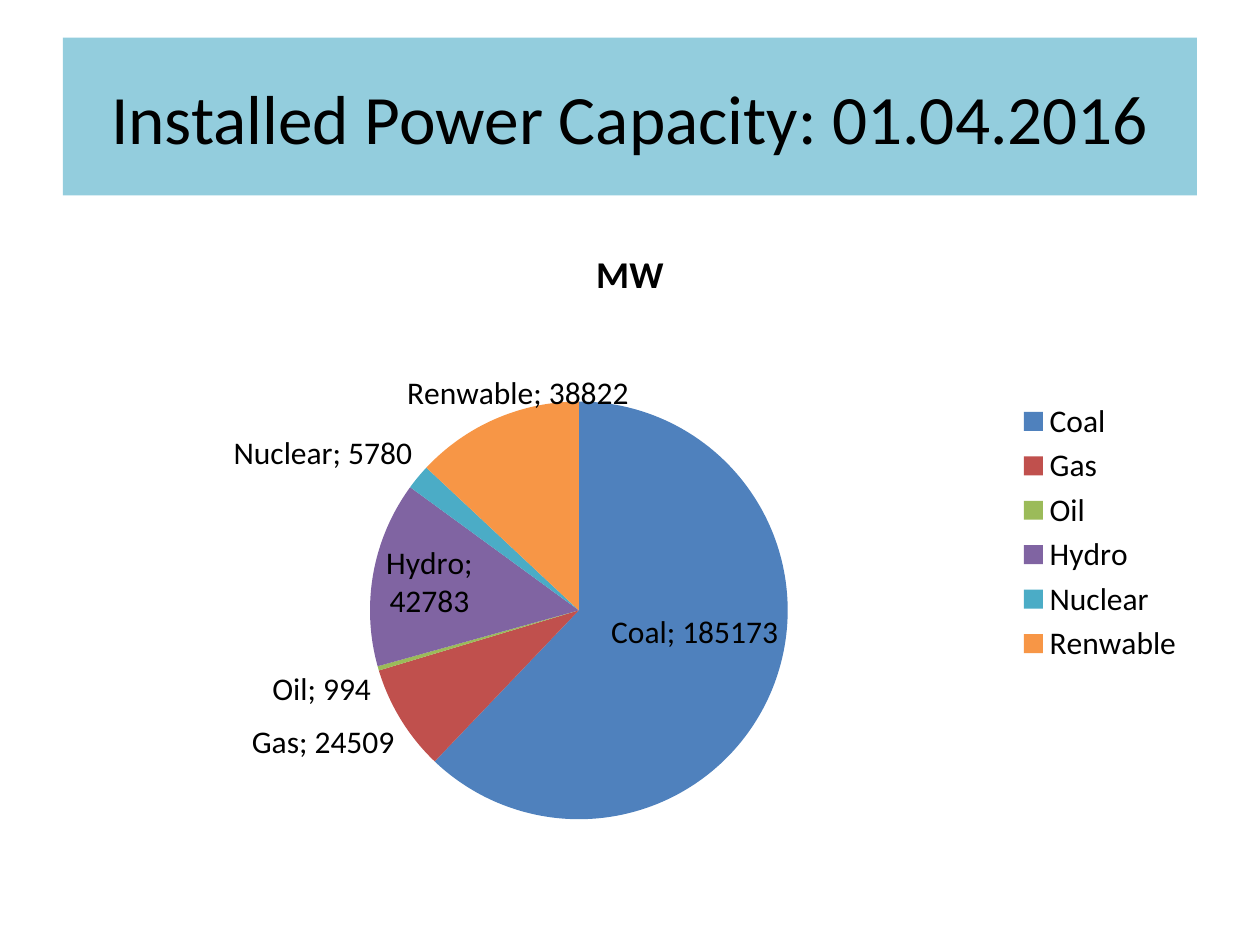
from dataclasses import dataclass

from lxml.etree import SubElement
from pptx import Presentation
from pptx.chart.data import CategoryChartData
from pptx.dml.color import RGBColor
from pptx.enum.chart import XL_CHART_TYPE as ChartType
from pptx.enum.chart import XL_LABEL_POSITION as LabelPosition
from pptx.enum.chart import XL_LEGEND_POSITION as LegendPosition
from pptx.enum.shapes import MSO_SHAPE as Preset
from pptx.enum.text import MSO_ANCHOR as Anchor
from pptx.enum.text import PP_ALIGN as Align
from pptx.oxml.ns import qn
from pptx.util import Cm, Pt

HEADING = "Installed Power Capacity: 01.04.2016"
UNIT = "MW"
CAPACITY = [
    ("Coal", 185173, "4F81BD"),
    ("Gas", 24509, "C0504D"),
    ("Oil", 994, "9BBB59"),
    ("Hydro", 42783, "8064A2"),
    ("Nuclear", 5780, "4BACC6"),
    ("Renwable", 38822, "F79646"),
]
MOVED_LABEL = "Renwable"
LABEL_SHIFT = {"x": 0.12, "y": 0}
PIE_AREA = {"x": 0.27, "y": 0.29, "w": 0.37, "h": 0.67}


@dataclass(frozen=True)
class Theme:
    font: str = "Calibri"
    ink: str = "000000"
    banner: str = "93CDDD"
    heading_size: float = 39.6
    chart_title_size: float = 21.6
    chart_size: float = 18


THEME = Theme()


def style_font(font, size, bold=False):
    font.name = THEME.font
    font.size = Pt(size)
    font.bold = bold
    font.color.rgb = RGBColor.from_string(THEME.ink)


def write_text(frame, text, size, bold=False, align=Align.CENTER):
    para = frame.paragraphs[0]
    para.alignment = align
    span = para.add_run()
    span.text = text
    style_font(span.font, size, bold)


def fill_layout(layout, values, target=None):
    manual = SubElement(layout, qn("c:manualLayout"))
    if target:
        SubElement(manual, qn("c:layoutTarget"), val=target)
        for axis in "xy":
            SubElement(manual, qn(f"c:{axis}Mode"), val="edge")
    for key, value in values.items():
        SubElement(manual, qn(f"c:{key}"), val=str(value))


def add_separator(labels):
    separator = SubElement(labels, qn("c:separator"))
    separator.text = "; "
    labels.find(qn("c:showBubbleSize")).addnext(separator)


def add_banner(page):
    box = page.shapes.add_shape(Preset.RECTANGLE, Cm(1.27), Cm(0.76), Cm(22.86), Cm(3.18))
    box.shadow.inherit = False
    box.fill.solid()
    box.fill.fore_color.rgb = RGBColor.from_string(THEME.banner)
    box.line.fill.background()
    box.text_frame.word_wrap = True
    box.text_frame.vertical_anchor = Anchor.MIDDLE
    write_text(box.text_frame, HEADING, THEME.heading_size)


def label_slices(series, names):
    labels = series.data_labels
    labels.show_value = True
    labels.show_category_name = True
    labels.position = LabelPosition.BEST_FIT
    style_font(labels.font, THEME.chart_size)
    moved = series.points[names.index(MOVED_LABEL)].data_label
    moved.position = LabelPosition.BEST_FIT
    style_font(moved.font, THEME.chart_size)
    node = labels._element.find(qn("c:dLbl"))
    node.find(qn("c:showCatName")).set("val", "1")
    layout = SubElement(node, qn("c:layout"))
    node.find(qn("c:idx")).addnext(layout)
    fill_layout(layout, LABEL_SHIFT)
    for element in (node, labels._element):
        add_separator(element)


def add_pie(page):
    names, values, colours = zip(*CAPACITY)
    data = CategoryChartData()
    data.categories = names
    data.add_series(UNIT, values)
    chart = page.shapes.add_chart(
        ChartType.PIE, Cm(1.27), Cm(4.45), Cm(22.86), Cm(12.57), data
    ).chart
    style_font(chart.font, THEME.chart_size)
    chart.has_title = True
    write_text(chart.chart_title.text_frame, UNIT, THEME.chart_title_size, bold=True)
    chart.has_legend = True
    chart.legend.position = LegendPosition.RIGHT
    chart.legend.include_in_layout = False
    style_font(chart.legend.font, THEME.chart_size)
    plot = chart.plots[0]
    plot.vary_by_categories = True
    series = plot.series[0]
    for index, colour in enumerate(colours):
        fill = series.points[index].format.fill
        fill.solid()
        fill.fore_color.rgb = RGBColor.from_string(colour)
    label_slices(series, names)
    area = chart._chartSpace.chart.plotArea
    layout = area.find(qn("c:layout"))
    if layout is None:
        layout = SubElement(area, qn("c:layout"))
        area.insert(0, layout)
    fill_layout(layout, PIE_AREA, target="inner")


def main():
    """Build the installed power capacity slide."""
    deck = Presentation()
    deck.slide_width, deck.slide_height = Cm(25.4), Cm(19.05)
    page = deck.slides.add_slide(deck.slide_layouts[6])
    add_banner(page)
    add_pie(page)
    deck.save("out.pptx")


if __name__ == "__main__":
    main()
